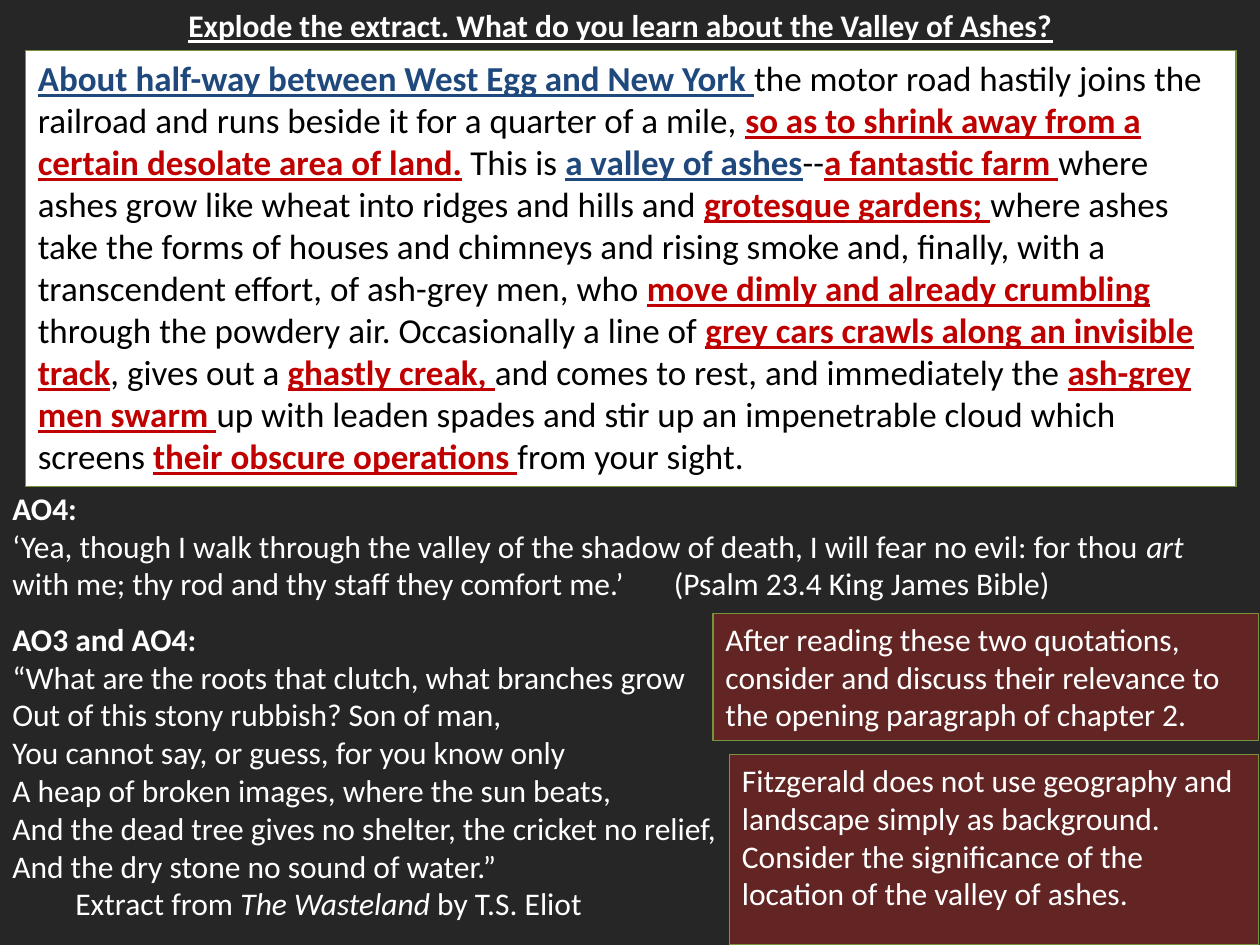
from lxml import etree
from pptx import Presentation
from pptx import util as u
from pptx.dml.color import RGBColor
from pptx.enum import shapes, text
from pptx.oxml.ns import qn

DARK, WHITE, BLACK = "262626", "FFFFFF", "000000"
BLUE, RED, MAROON, GREEN = "1F497D", "C00000", "632523", "77933C"

# Extract: plain narration, blue for place, red for language to analyse
EXTRACT = [
    ("About half-way between West Egg and New York ", BLUE),
    ("the motor road hastily joins the railroad and runs beside it "
     "for a quarter of a mile, ", BLACK),
    ("so as to shrink away from a certain desolate area of land.", RED),
    (" This is ", BLACK),
    ("a valley of ashes", BLUE),
    ("--", BLACK),
    ("a fantastic farm ", RED),
    ("where ashes grow like wheat into ridges and hills and ", BLACK),
    ("grotesque gardens; ", RED),
    ("where ashes take the forms of houses and chimneys and rising smoke and, "
     "finally, with a transcendent effort, of ash-grey men, who ", BLACK),
    ("move dimly and already crumbling ", RED),
    ("through the powdery air. Occasionally a line of ", BLACK),
    ("grey cars crawls along an invisible track", RED),
    (", gives out a ", BLACK),
    ("ghastly creak, ", RED),
    ("and comes to rest, and immediately the ", BLACK),
    ("ash-grey men swarm ", RED),
    ("up with leaden spades and stir up an impenetrable cloud which screens ", BLACK),
    ("their obscure operations ", RED),
    ("from your sight.", BLACK),
]

# Quotations: each line is a list of pieces, every second piece is italic
PSALM = [
    ["‘Yea, though I walk through the valley of the shadow of death, "
     "I will fear no evil: for thou ", "art",
     " with me; thy rod and thy staff they comfort me.’\t(Psalm 23.4 King James Bible)"],
]
POEM = [
    ["“What are the roots that clutch, what branches grow"],
    ["Out of this stony rubbish? Son of man,"],
    ["You cannot say, or guess, for you know only"],
    ["A heap of broken images, where the sun beats,"],
    ["And the dead tree gives no shelter, the cricket no relief,"],
    ["And the dry stone no sound of water.”"],
    ["\tExtract from ", "The Wasteland", " by T.S. Eliot"],
]


def rgb(value):
    return RGBColor.from_string(value)


def place(sp, box):
    sp.left, sp.top, sp.width, sp.height = (u.Inches(v) for v in box)


def paint(sp, fill):
    sp.fill.solid()
    sp.fill.fore_color.rgb = rgb(fill)
    sp.line.color.rgb = rgb(GREEN)
    sp.line.width = u.Pt(0.75)


def set_frame(tf, anchor=text.MSO_ANCHOR.TOP):
    tf.word_wrap = True
    tf.auto_size = text.MSO_AUTO_SIZE.NONE
    tf.vertical_anchor = anchor


def set_font(font, size=18, color=WHITE, bold=False):
    font.name, font.size, font.bold = "Calibri", u.Pt(size), bold
    font.color.rgb = rgb(color)


def add_tab_stop(p, inches):
    tabs = etree.SubElement(p._p.get_or_add_pPr(), qn("a:tabLst"))
    etree.SubElement(tabs, qn("a:tab"), pos=str(u.Inches(inches)), algn="l")


def add_heading(sp, words, box):
    place(sp, box)
    tf = sp.text_frame
    set_frame(tf, text.MSO_ANCHOR.MIDDLE)
    p = tf.paragraphs[0]
    p.text = words
    p.alignment = text.PP_ALIGN.CENTER
    set_font(p.font, bold=True)
    p.font.underline = True


def add_extract(sp, pieces, box):
    place(sp, box)
    paint(sp, WHITE)
    tf = sp.text_frame
    set_frame(tf)
    p = tf.paragraphs[0]
    p.alignment = text.PP_ALIGN.LEFT
    for words, color in pieces:
        r = p.add_run()
        r.text = words
        marked = color != BLACK
        set_font(r.font, 20, color, marked)
        r.font.underline = marked


def add_quotation(s, label, lines, box):
    tf = s.shapes.add_textbox(*(u.Inches(v) for v in box)).text_frame
    set_frame(tf)
    tf.paragraphs[0].text = label
    set_font(tf.paragraphs[0].font, bold=True)
    for pieces in lines:
        p = tf.add_paragraph()
        set_font(p.font)
        for i, words in enumerate(pieces):
            r = p.add_run()
            r.text = words
            if i % 2:
                r.font.italic = True
    return tf


def add_task(s, words, box):
    sp = s.shapes.add_shape(shapes.MSO_SHAPE.RECTANGLE, *(u.Inches(v) for v in box))
    sp.shadow.inherit = False
    paint(sp, MAROON)
    set_frame(sp.text_frame)
    p = sp.text_frame.paragraphs[0]
    p.text = words
    p.alignment = text.PP_ALIGN.LEFT
    set_font(p.font)


def main():
    prs = Presentation()
    prs.slide_width, prs.slide_height = u.Inches(10), u.Inches(7.5)
    s = prs.slides.add_slide(prs.slide_layouts[0])
    s.background.fill.solid()
    s.background.fill.fore_color.rgb = rgb(DARK)

    # Heading and annotated extract
    add_heading(s.shapes.title,
                "Explode the extract. What do you learn about the Valley of Ashes?",
                (0.28, 0, 9.29, 0.4))
    add_extract(s.placeholders[1], EXTRACT, (0.2, 0.4, 9.61, 3.46))

    # Quotations to compare
    psalm = add_quotation(s, "AO4:", PSALM, (0, 3.83, 9.8, 1.01))
    add_tab_stop(psalm.paragraphs[1], 5.25)
    add_quotation(s, "AO3 and AO4:", POEM, (0, 4.87, 6.57, 2.52))

    # Discussion tasks
    add_task(s, "After reading these two quotations, consider and discuss their "
                "relevance to the opening paragraph of chapter 2.",
             (5.66, 4.87, 4.33, 1.01))
    add_task(s, "Fitzgerald does not use geography and landscape simply as background. "
                "Consider the significance of the location of the valley of ashes.",
             (5.79, 5.99, 4.2, 1.51))

    prs.save("out.pptx")


if __name__ == "__main__":
    main()
